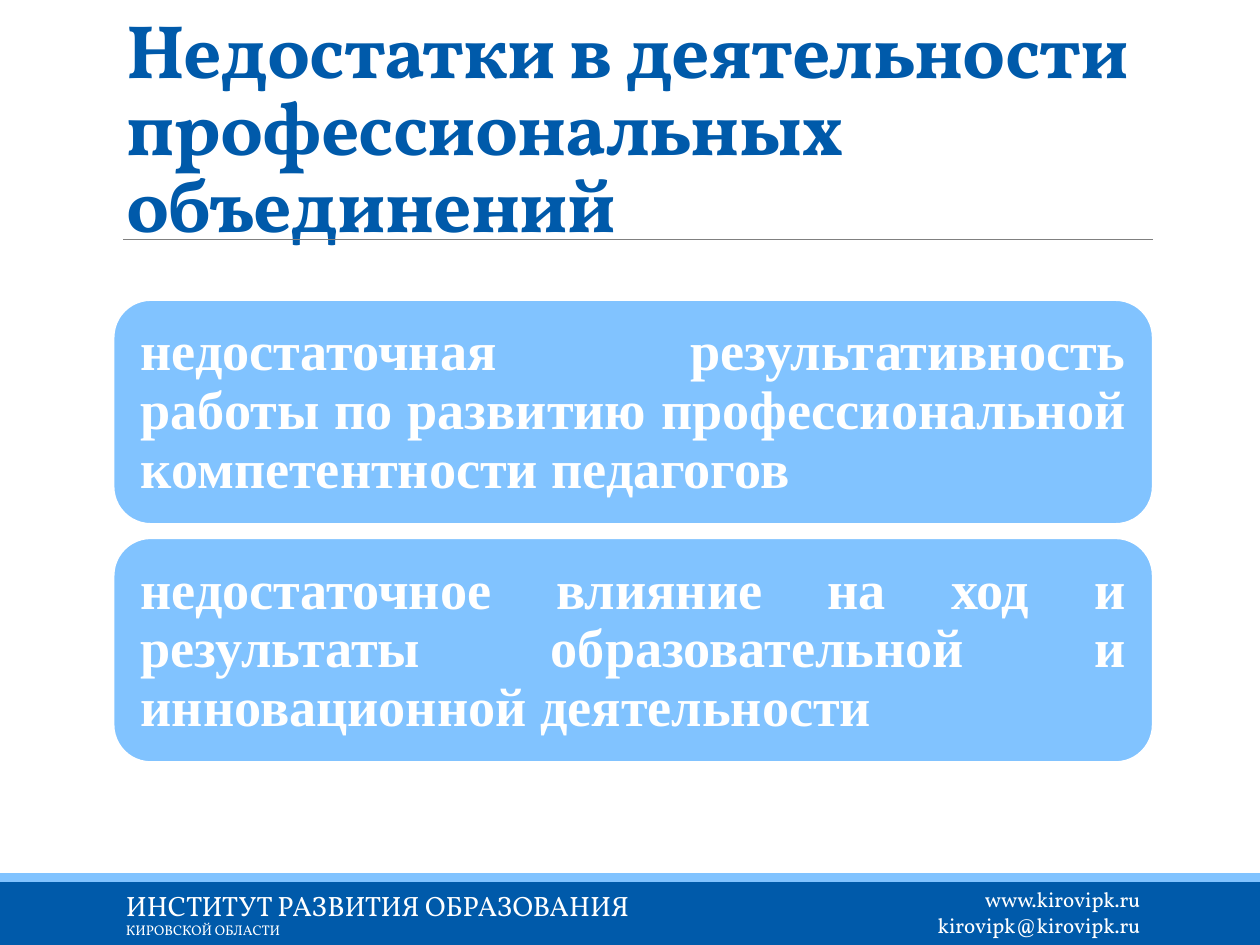
from dataclasses import dataclass

import pptx
import pptx.dml.color
import pptx.enum.shapes
import pptx.enum.text
import pptx.oxml.ns
import pptx.util
from lxml import etree

WIDTH, HEIGHT = 10, 7.5
LEFT, CONTENT_WIDTH = 0.9, 8.25
CARD_TOP, CARD_HEIGHT, CARD_PITCH = 2.38, 1.78, 1.89
COLORS = {"navy": "005AAA", "sky": "81C3FF", "white": "FFFFFF", "gray": "808080"}
HEADING_FONT, BODY_FONT = "Vollkorn", "Times New Roman"
ALIGN = pptx.enum.text.PP_ALIGN
ANCHOR = pptx.enum.text.MSO_ANCHOR
SHAPE = pptx.enum.shapes.MSO_SHAPE


@dataclass
class Box:
    left: float
    top: float
    width: float
    height: float

    def emu(self) -> list:
        return [pptx.util.Inches(value)
                for value in (self.left, self.top, self.width, self.height)]


@dataclass
class FooterText:
    box: Box
    align: ALIGN
    lines: list[tuple[str, float]]


FOOTERS = [
    FooterText(Box(7.27, 6.99, 1.88, 0.5), ALIGN.RIGHT,
               [("www.kirovipk.ru", 12), ("kirovipk@kirovipk.ru", 12)]),
    FooterText(Box(LEFT, 7, 4.38, 0.5), ALIGN.LEFT,
               [("ИНСТИТУТ РАЗВИТИЯ ОБРАЗОВАНИЯ", 16), ("КИРОВСКОЙ ОБЛАСТИ", 8)]),
]
CARDS = [
    "недостаточная результативность работы по развитию "
    "профессиональной компетентности педагогов",
    "недостаточное влияние на ход и результаты образовательной "
    "и инновационной деятельности",
]


def color(name: str) -> pptx.dml.color.RGBColor:
    return pptx.dml.color.RGBColor.from_string(COLORS[name])


def write(paragraph, text: str, font_name: str, size: float,
          color_name: str, bold: bool = False) -> None:
    paragraph.text = text
    for run in paragraph.runs:
        run.font.name = font_name
        run.font.size = pptx.util.Pt(size)
        run.font.bold = bold
        run.font.color.rgb = color(color_name)


def add_filled(slide, kind: SHAPE, box: Box, fill: str):
    shape = slide.shapes.add_shape(kind, *box.emu())
    shape.shadow.inherit = False
    shape.fill.solid()
    shape.fill.fore_color.rgb = color(fill)
    shape.line.fill.background()
    return shape


def add_rule(slide) -> None:
    start, end, top = (pptx.util.Inches(value) for value in (0.98, 9.15, 1.9))
    rule = slide.shapes.add_connector(
        pptx.enum.shapes.MSO_CONNECTOR.STRAIGHT, start, top, end, top)
    rule.line.color.rgb = color("gray")
    rule.line.width = pptx.util.Pt(0.5)
    etree.SubElement(rule._element.spPr, pptx.oxml.ns.qn("a:effectLst"))


def add_footer_text(slide, footer: FooterText) -> None:
    frame = slide.shapes.add_textbox(*footer.box.emu()).text_frame
    frame.word_wrap = True
    frame.text = "\n".join(text for text, _ in footer.lines)
    for paragraph, (text, size) in zip(frame.paragraphs, footer.lines):
        paragraph.alignment = footer.align
        write(paragraph, text, HEADING_FONT, size, "white")


def format_title(slide, text: str) -> None:
    title = slide.shapes.title
    title.left, title.top, title.width, title.height = Box(
        LEFT, 0.31, CONTENT_WIDTH, 1.71).emu()
    frame = title.text_frame
    frame.word_wrap = True
    frame.auto_size = pptx.enum.text.MSO_AUTO_SIZE.NONE
    frame.vertical_anchor = ANCHOR.BOTTOM
    paragraph = frame.paragraphs[0]
    paragraph.alignment = ALIGN.LEFT
    paragraph.line_spacing = 0.85
    write(paragraph, text, HEADING_FONT, 43.2, "navy", bold=True)
    for run in paragraph.runs:
        run.font._element.set("spc", "-50")


def add_card(slide, row: int, text: str) -> None:
    box = Box(LEFT, CARD_TOP + row * CARD_PITCH, CONTENT_WIDTH, CARD_HEIGHT)
    card = add_filled(slide, SHAPE.ROUNDED_RECTANGLE, box, "sky")
    card.line.color.rgb = color("white")
    card.line.width = pptx.util.Pt(1.25)
    frame = card.text_frame
    frame.word_wrap = True
    frame.vertical_anchor = ANCHOR.MIDDLE
    frame.margin_left = frame.margin_right = pptx.util.Inches(0.13)
    frame.margin_top = frame.margin_bottom = pptx.util.Inches(0.13)
    paragraph = frame.paragraphs[0]
    paragraph.alignment = ALIGN.JUSTIFY
    paragraph.line_spacing = 0.9
    write(paragraph, text, BODY_FONT, 31, "white", bold=True)


def main() -> None:
    presentation = pptx.Presentation()
    presentation.slide_width = pptx.util.Inches(WIDTH)
    presentation.slide_height = pptx.util.Inches(HEIGHT)
    slide = presentation.slides.add_slide(presentation.slide_layouts[5])
    add_filled(slide, SHAPE.RECTANGLE, Box(0, 7, WIDTH, 0.5), "navy")
    add_filled(slide, SHAPE.RECTANGLE, Box(0, 6.93, WIDTH, 0.07), "sky")
    add_rule(slide)
    for footer in FOOTERS:
        add_footer_text(slide, footer)
    format_title(slide, "Недостатки в деятельности профессиональных объединений")
    for row, text in enumerate(CARDS):
        add_card(slide, row, text)
    presentation.save("out.pptx")


if __name__ == "__main__":
    main()
